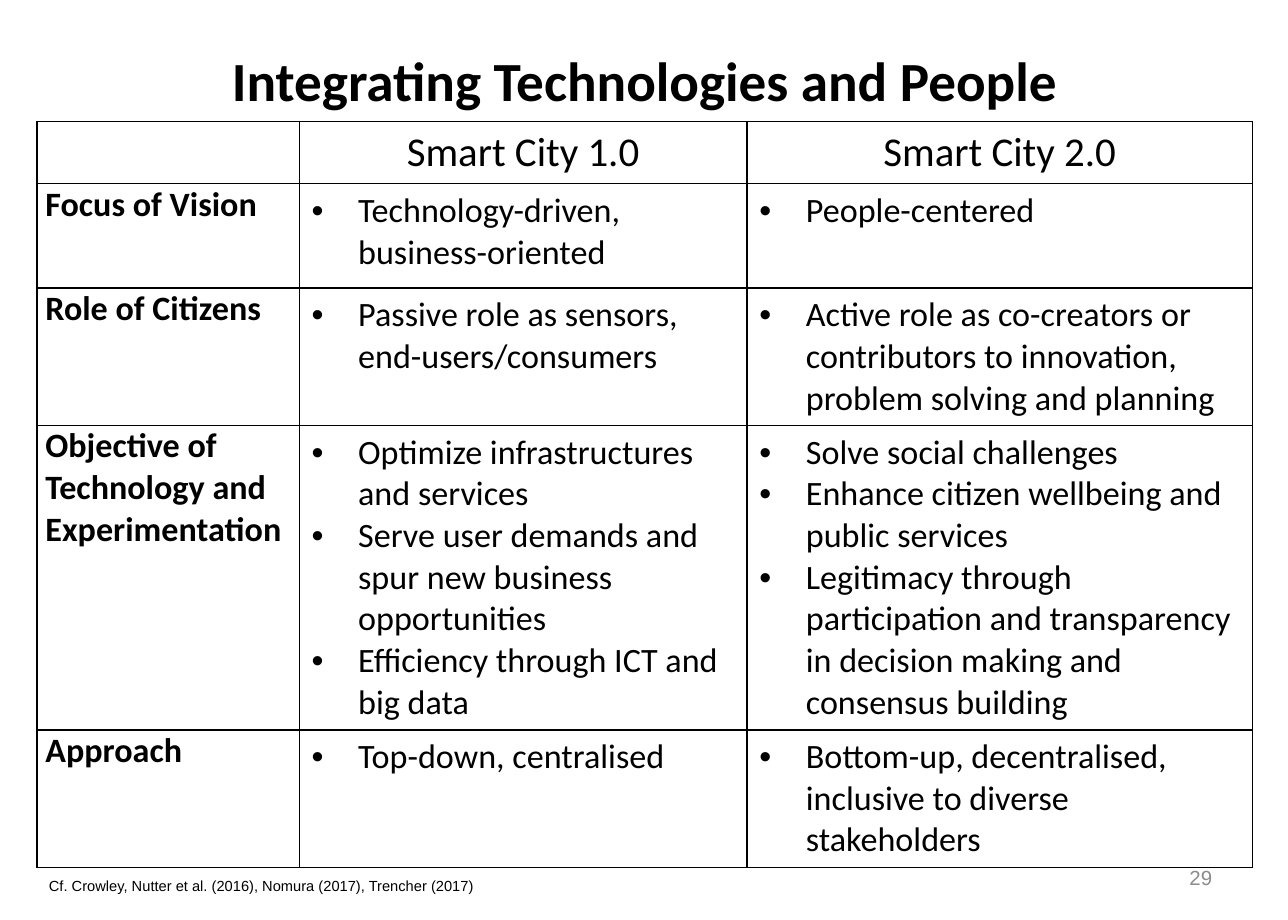
from lxml import etree
from pptx import Presentation
from pptx.dml.color import RGBColor
from pptx.enum import text
from pptx.oxml import ns
from pptx.util import Inches, Pt

HEADERS = ["", "Smart City 1.0", "Smart City 2.0"]
ROWS = [
    ("Focus of Vision",
     ["Technology-driven, business-oriented"],
     ["People-centered"]),
    ("Role of Citizens",
     ["Passive role as sensors, end-users/consumers"],
     ["Active role as co-creators or contributors to innovation, "
      "problem solving and planning"]),
    ("Objective of Technology and Experimentation",
     ["Optimize infrastructures and services",
      "Serve user demands and spur new business opportunities",
      "Efficiency through ICT and big data"],
     ["Solve social challenges",
      "Enhance citizen wellbeing and public services",
      "Legitimacy through participation and transparency in decision making "
      "and consensus building"]),
    ("Approach",
     ["Top-down, centralised"],
     ["Bottom-up, decentralised, inclusive to diverse stakeholders"]),
]
COL_WIDTHS = [2.14, 3.65, 4.12]
ROW_HEIGHTS = [0.5, 0.85, 1.12, 2.48, 1.12]
BLACK, GREY = "000000", "8C8C8C"


def rgb(color):
    """Turn a hex string into a colour."""
    return RGBColor.from_string(color)


def write(p, words, size, font="Calibri", color=BLACK, bold=False, align=None):
    """Fill a paragraph with formatted text."""
    p.text = words
    p.alignment = align
    for r in p.runs:
        r.font.size, r.font.name, r.font.bold = Pt(size), font, bold
        r.font.color.rgb = rgb(color)


def indent(p, left, hanging=0, bullet=None):
    """Set a paragraph's indents and optional bullet."""
    pPr = p._p.get_or_add_pPr()
    pPr.set("marL", str(Inches(left)))
    pPr.set("indent", str(Inches(-hanging)))
    if bullet:
        etree.SubElement(pPr, ns.qn("a:buFont")).set("typeface", "Arial")
        etree.SubElement(pPr, ns.qn("a:buChar")).set("char", bullet)


def outline(cell, color=BLACK, width=1):
    """Draw all four borders of a cell and clear its fill."""
    tcPr = cell._tc.get_or_add_tcPr()
    for side in ("lnL", "lnR", "lnT", "lnB"):
        ln = etree.SubElement(tcPr, ns.qn("a:" + side), w=str(Pt(width)))
        fill = etree.SubElement(ln, ns.qn("a:solidFill"))
        etree.SubElement(fill, ns.qn("a:srgbClr"), val=color)
    cell.fill.background()


def label_cell(cell, words):
    """Write a bold row label without cell margins."""
    cell.margin_left = cell.margin_right = cell.margin_top = cell.margin_bottom = 0
    p = cell.text_frame.paragraphs[0]
    write(p, words, 20, bold=True)
    p.space_before = Pt(4.4)
    indent(p, 0.07)


def bullet_cell(cell, items):
    """Write a bulleted list in a cell."""
    tf = cell.text_frame
    tf.text = "\n".join(items)
    for p, item in zip(tf.paragraphs, items):
        write(p, item, 20)
        indent(p, 0.38, 0.38, "•")


def add_title(s, words, left, top, width, height):
    """Place the slide title."""
    sp = s.shapes.title
    sp.left, sp.top, sp.width, sp.height = map(Inches, (left, top, width, height))
    sp.text_frame.vertical_anchor = text.MSO_ANCHOR.MIDDLE
    write(sp.text_frame.paragraphs[0], words, 32.4, bold=True,
          align=text.PP_ALIGN.CENTER)


def add_comparison(s, left, top):
    """Place the comparison table."""
    box = map(Inches, (left, top, sum(COL_WIDTHS), sum(ROW_HEIGHTS)))
    table = s.shapes.add_table(len(ROW_HEIGHTS), len(COL_WIDTHS), *box).table
    table.first_row = table.horz_banding = False
    for column, width in zip(table.columns, COL_WIDTHS):
        column.width = Inches(width)
    for row, height in zip(table.rows, ROW_HEIGHTS):
        row.height = Inches(height)
    for cell in table.iter_cells():
        outline(cell)
    for c, words in enumerate(HEADERS):
        write(table.cell(0, c).text_frame.paragraphs[0], words, 24,
              align=text.PP_ALIGN.CENTER)
    for i, (label, *lists) in enumerate(ROWS, 1):
        label_cell(table.cell(i, 0), label)
        for c, items in enumerate(lists, 1):
            bullet_cell(table.cell(i, c), items)


def add_note(s, words, left, top, width, height, size, color, align, anchor):
    """Place a small line of text at the foot of the slide."""
    sp = s.shapes.add_textbox(*map(Inches, (left, top, width, height)))
    tf = sp.text_frame
    tf.word_wrap = True
    tf.vertical_anchor = anchor
    write(tf.paragraphs[0], words, size, "Arial", color, align=align)


def main():
    """Build and save the slide."""
    prs = Presentation()
    prs.slide_width, prs.slide_height = Inches(10.5), Inches(7.5)
    s = prs.slides.add_slide(prs.slide_layouts[5])
    add_title(s, "Integrating Technologies and People", 0.53, 0.3, 9.45, 0.69)
    add_comparison(s, 0.3, 0.99)
    add_note(s, "29", 7.53, 6.95, 2.45, 0.4, 12, GREY,
             text.PP_ALIGN.RIGHT, text.MSO_ANCHOR.MIDDLE)
    add_note(s, "Cf. Crowley, Nutter et al. (2016), Nomura (2017), Trencher (2017)",
             0.3, 7.1, 4.05, 0.25, 8.6, BLACK,
             text.PP_ALIGN.LEFT, text.MSO_ANCHOR.TOP)
    prs.save("out.pptx")


if __name__ == "__main__":
    main()
